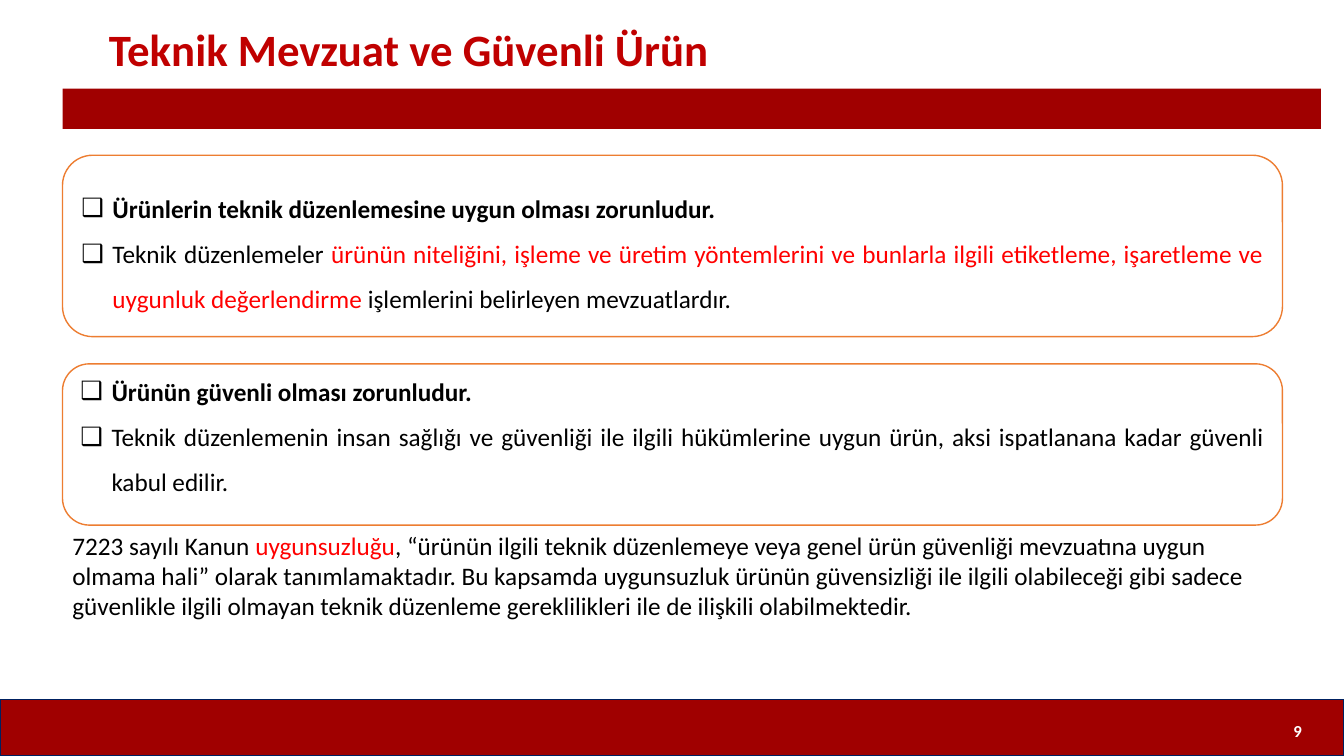
from lxml.etree import SubElement
from pptx import Presentation
from pptx.dml.color import RGBColor
from pptx.enum.shapes import MSO_SHAPE as Shape
from pptx.enum.text import MSO_ANCHOR as Anchor, PP_ALIGN as Align
from pptx.oxml.ns import qn
from pptx.util import Inches, Pt

DARK_RED = RGBColor(0xA0, 0x00, 0x00)
TITLE_RED = RGBColor(0xC0, 0x00, 0x00)
RED = RGBColor(0xFF, 0x00, 0x00)
ORANGE = RGBColor(0xED, 0x7D, 0x31)
NAVY = RGBColor(0x00, 0x20, 0x60)
BLACK = RGBColor(0x00, 0x00, 0x00)
WHITE = RGBColor(0xFF, 0xFF, 0xFF)

LEFT, WIDTH = 0.62, 12.1
HANG = Inches(0.31)

REGULATION = [
    [("Ürünlerin teknik düzenlemesine uygun olması zorunludur.", {"bold": True})],
    [("Teknik düzenlemeler ", {}),
     ("ürünün niteliğini, işleme ve üretim yöntemlerini ve bunlarla ilgili "
      "etiketleme, işaretleme ve uygunluk değerlendirme", {"color": RED}),
     (" işlemlerini belirleyen mevzuatlardır.", {})],
]
SAFETY = [
    [("Ürünün güvenli olması zorunludur.", {"bold": True})],
    [("Teknik düzenlemenin insan sağlığı ve güvenliği ile ilgili hükümlerine "
      "uygun ürün, aksi ispatlanana kadar güvenli kabul edilir.", {})],
]
NONCONFORMITY = [
    ("7223 sayılı Kanun", {}),
    (" uygunsuzluğu", {"color": RED}),
    (", “ürünün ilgili teknik düzenlemeye veya genel ürün güvenliği mevzuatına "
     "uygun olmama hali” olarak tanımlamaktadır. Bu kapsamda uygunsuzluk ürünün "
     "güvensizliği ile ilgili olabileceği gibi sadece güvenlikle ilgili olmayan "
     "teknik düzenleme gereklilikleri ile de ilişkili olabilmektedir.", {}),
]


def add_runs(paragraph, runs, size=18):
    for text, changes in runs:
        run = paragraph.add_run()
        run.text = text
        look = {"name": "Calibri", "size": Pt(size), "bold": False,
                "color": BLACK, **changes}
        run.font.color.rgb = look.pop("color")
        for key, value in look.items():
            setattr(run.font, key, value)


def add_panel(slide, box, kind=Shape.RECTANGLE, fill=None, line=None):
    panel = slide.shapes.add_shape(kind, *map(Inches, box))
    panel.shadow.inherit = False
    if fill is None:
        panel.fill.background()
    else:
        panel.fill.solid()
        panel.fill.fore_color.rgb = fill
    if line is None:
        panel.line.fill.background()
    else:
        panel.line.color.rgb = line
        panel.line.width = Pt(1)
    return panel


def add_footer(slide, box, number):
    left, top, width, height = box
    add_panel(slide, box, fill=DARK_RED, line=NAVY)
    badge = add_panel(slide, (left + width - 0.7, top, 0.48, height + 0.03),
                      Shape.ROUND_2_SAME_RECTANGLE)
    frame = badge.text_frame
    frame.vertical_anchor = Anchor.MIDDLE
    frame.paragraphs[0].alignment = Align.CENTER
    add_runs(frame.paragraphs[0], [(number, {"bold": True, "color": WHITE})], 12)


def add_heading(slide, box, text):
    title = slide.shapes.title
    for side, length in zip(("left", "top", "width", "height"), box):
        setattr(title, side, Inches(length))
    frame = title.text_frame
    frame.word_wrap = True
    frame.vertical_anchor = Anchor.TOP
    frame.paragraphs[0].alignment = Align.LEFT
    add_runs(frame.paragraphs[0], [(text, {"bold": True, "color": TITLE_RED})], 32)


def add_rule_card(slide, box, rules, bottom_inset=0.05):
    card = add_panel(slide, box, Shape.ROUNDED_RECTANGLE, WHITE, ORANGE)
    frame = card.text_frame
    frame.word_wrap = True
    frame.vertical_anchor = Anchor.MIDDLE
    frame.margin_bottom = Inches(bottom_inset)
    for index, runs in enumerate(rules):
        rule = frame.add_paragraph() if index else frame.paragraphs[0]
        rule.alignment = Align.JUSTIFY
        rule.line_spacing = 1.5
        # Hanging check-box bullet
        props = rule._p.get_or_add_pPr()
        props.set("marL", str(HANG))
        props.set("indent", str(-HANG))
        SubElement(props, qn("a:buFont"), typeface="Wingdings 2" and "Arial")
        SubElement(props, qn("a:buChar"), char="❑")
        add_runs(rule, runs)


def add_note(slide, box, runs):
    frame = slide.shapes.add_textbox(*map(Inches, box)).text_frame
    frame.word_wrap = True
    add_runs(frame.paragraphs[0], runs)


def main():
    deck = Presentation()
    deck.slide_width, deck.slide_height = Inches(13.33), Inches(7.5)
    slide = deck.slides.add_slide(deck.slide_layouts[5])

    # Footer, title and red band
    add_footer(slide, (0, 6.94, 13.33, 0.56), "9")
    add_heading(slide, (0.98, 0.17, 7.22, 0.64), "Teknik Mevzuat ve Güvenli Ürün")
    add_panel(slide, (LEFT, 0.88, 12.48, 0.4), fill=DARK_RED)

    # Two rule cards and the closing note
    add_rule_card(slide, (LEFT, 1.54, WIDTH, 1.8), REGULATION)
    add_rule_card(slide, (LEFT, 3.61, WIDTH, 1.6), SAFETY, bottom_inset=0.36)
    add_note(slide, (LEFT, 5.21, WIDTH, 1.01), NONCONFORMITY)

    deck.save("out.pptx")


if __name__ == "__main__":
    main()
